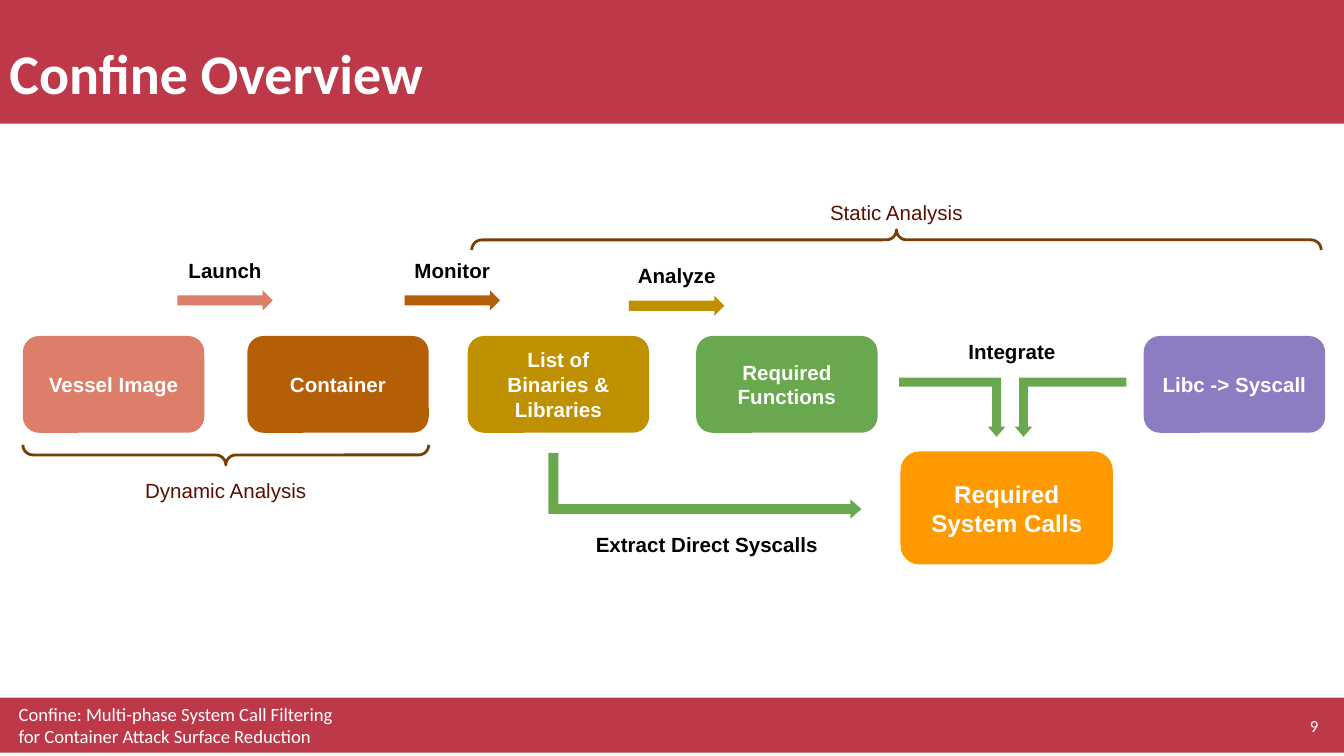
from dataclasses import dataclass

from pptx import Presentation
from pptx.dml.color import RGBColor
from pptx.enum.shapes import MSO_SHAPE
from pptx.enum.text import MSO_ANCHOR, MSO_AUTO_SIZE, PP_ALIGN
from pptx.shapes.autoshape import Shape
from pptx.slide import Slide
from pptx.util import Inches, Pt


@dataclass(frozen=True)
class Theme:
    red: str = "BD3949"
    white: str = "FFFFFF"
    black: str = "000000"
    maroon: str = "5B0F00"
    brown: str = "783F04"
    pink: str = "DD7E6B"
    rust: str = "B45F06"
    gold: str = "BF9000"
    green: str = "6AA84F"
    violet: str = "8E7CC3"
    orange: str = "FF9900"
    sans: str = "Arial"
    head: str = "Calibri"
    title: float = 30
    result: float = 13
    body: float = 11
    foot: float = 10
    page: float = 9


@dataclass(frozen=True)
class Frame:
    left: float
    top: float
    width: float
    height: float

    def lengths(self) -> list[int]:
        return [Inches(v) for v in (self.left, self.top, self.width, self.height)]

    def turned(self) -> "Frame":
        """Swap width and height about the same centre."""
        shift = (self.width - self.height) / 2
        return Frame(self.left + shift, self.top - shift, self.height, self.width)


@dataclass(frozen=True)
class Box:
    text: str
    frame: Frame
    fill: str
    size: float


@dataclass(frozen=True)
class Step:
    text: str
    left: float
    top: float
    fill: str


@dataclass(frozen=True)
class Bend:
    frame: Frame
    angle: int
    flip: bool = False


@dataclass(frozen=True)
class Phase:
    text: str
    brace: Frame
    angle: int
    top: float


THEME = Theme()
WIDTH = 10
HEIGHT = WIDTH * 9 / 16
BEND = (0.151, 0.148, 0.171)
STEP_W, LABEL_W, LABEL_H = 0.71, 1.51, 0.3


def stage(text: str, left: float, fill: str) -> Box:
    return Box(text, Frame(left, 2.5, 1.35, 0.72), fill, THEME.body)


BOXES = [
    stage("Vessel Image", 0.17, THEME.pink),
    stage("Container", 1.84, THEME.rust),
    stage("List of Binaries & Libraries", 3.48, THEME.gold),
    stage("Required Functions", 5.18, THEME.green),
    stage("Libc -> Syscall", 8.51, THEME.violet),
    Box("Required System Calls", Frame(6.7, 3.36, 1.58, 0.84), THEME.orange, THEME.result),
]
STEPS = [
    Step("Launch", 1.32, 2.16, THEME.pink),
    Step("Monitor", 3.01, 2.16, THEME.rust),
    Step("Analyze", 4.68, 2.2, THEME.gold),
]
BENDS = [
    Bend(Frame(4.08, 3.37, 2.33, 0.49), 90),
    Bend(Frame(6.69, 2.81, 0.79, 0.44), 180, flip=True),
    Bend(Frame(7.55, 2.81, 0.83, 0.44), 180),
]
PHASES = [
    Phase("Dynamic Analysis", Frame(0.17, 3.31, 3.02, 0.15), 270, 3.46),
    Phase("Static Analysis", Frame(3.51, 1.71, 6.32, 0.15), 90, 1.39),
]


def write(shape: Shape, text: str, size: float, color: str, font: str = THEME.sans,
          bold: bool = False, align: PP_ALIGN = PP_ALIGN.CENTER,
          anchor: MSO_ANCHOR = MSO_ANCHOR.TOP, pad: tuple[float, float] = (0.1, 0.1)) -> None:
    """Put text in a shape, one paragraph a line; pad is (side, top)."""
    frame = shape.text_frame
    side, edge = map(Inches, pad)
    layout = {"word_wrap": True, "auto_size": MSO_AUTO_SIZE.NONE, "vertical_anchor": anchor,
              "margin_left": side, "margin_right": side,
              "margin_top": edge, "margin_bottom": edge}
    for name, value in layout.items():
        setattr(frame, name, value)
    frame.text = text
    style = {"name": font, "size": Pt(size), "bold": bold}
    for para in frame.paragraphs:
        para.alignment = align
        for run in para.runs:
            for name, value in style.items():
                setattr(run.font, name, value)
            run.font.color.rgb = RGBColor.from_string(color)


def paint(shape: Shape, color: str) -> None:
    shape.fill.solid()
    shape.fill.fore_color.rgb = RGBColor.from_string(color)
    shape.line.fill.background()


def draw(slide: Slide, kind: MSO_SHAPE, frame: Frame, fill: str | None = None,
         angle: int = 0, adjust: tuple[float, ...] = ()) -> Shape:
    """Add a shape that covers the frame once it is turned by the angle."""
    place = frame.turned() if angle % 180 else frame
    shape = slide.shapes.add_shape(kind, *place.lengths())
    shape.shadow.inherit = False
    shape.rotation = angle
    for index, value in enumerate(adjust):
        shape.adjustments[index] = value
    if fill:
        paint(shape, fill)
    return shape


def label(slide: Slide, text: str, mid: float, top: float, color: str = THEME.black,
          bold: bool = True, width: float = LABEL_W) -> None:
    """Add a caption centred on mid."""
    frame = Frame(mid - width / 2, top, width, LABEL_H)
    box = slide.shapes.add_textbox(*frame.lengths())
    write(box, text, THEME.body, color, bold=bold)


def banner(slide: Slide) -> None:
    title = slide.shapes.title
    title.left, title.top, title.width, title.height = Frame(0, 0, WIDTH, 0.92).lengths()
    paint(title, THEME.red)
    write(title, "Confine Overview", THEME.title, THEME.white, THEME.head, True,
          PP_ALIGN.LEFT, pad=(0.07, 0.04))
    para = title.text_frame.paragraphs[0]
    para.line_spacing, para.space_before = 1.5, Pt(19)


def footer(slide: Slide) -> None:
    draw(slide, MSO_SHAPE.RECTANGLE, Frame(0, 5.19, WIDTH, 0.41), THEME.red)
    note = slide.shapes.add_textbox(*Frame(0.04, 5.13, 5.59, 0.5).lengths())
    write(note, "Confine: Multi-phase System Call Filtering\nfor Container Attack Surface Reduction",
          THEME.foot, THEME.white, THEME.head, align=PP_ALIGN.LEFT)
    page = slide.shapes.add_textbox(*Frame(9.49, 5.25, 0.39, 0.3).lengths())
    write(page, "9", THEME.page, THEME.white, THEME.head, align=PP_ALIGN.RIGHT,
          anchor=MSO_ANCHOR.MIDDLE, pad=(0.07, 0.04))


def diagram(slide: Slide) -> None:
    for box in BOXES:
        shape = draw(slide, MSO_SHAPE.ROUNDED_RECTANGLE, box.frame, box.fill, adjust=(0.167,))
        write(shape, box.text, box.size, THEME.white, bold=True, anchor=MSO_ANCHOR.MIDDLE)
    for phase in PHASES:
        brace = draw(slide, MSO_SHAPE.LEFT_BRACE, phase.brace, angle=phase.angle,
                     adjust=(0.5, 0.5))
        brace.fill.background()
        brace.line.color.rgb = RGBColor.from_string(THEME.brown)
        brace.line.width = Pt(1.5)
        mid = phase.brace.left + phase.brace.width / 2
        label(slide, phase.text, mid, phase.top, THEME.maroon, False)
    for step in STEPS:
        draw(slide, MSO_SHAPE.RIGHT_ARROW, Frame(step.left, step.top, STEP_W, 0.15), step.fill)
        label(slide, step.text, step.left + STEP_W / 2, step.top - 0.34)
    for bend in BENDS:
        arrow = draw(slide, MSO_SHAPE.BENT_UP_ARROW, bend.frame, THEME.green, bend.angle, BEND)
        if bend.flip:
            arrow.element.spPr.xfrm.set("flipH", "1")
    label(slide, "Extract Direct Syscalls", 5.26, 3.86, width=2)
    label(slide, "Integrate", 7.53, 2.42, width=2)


def main() -> None:
    deck = Presentation()
    deck.slide_width, deck.slide_height = Inches(WIDTH), Inches(HEIGHT)
    slide = deck.slides.add_slide(deck.slide_layouts[5])
    banner(slide)
    footer(slide)
    diagram(slide)
    deck.save("out.pptx")


if __name__ == "__main__":
    main()
